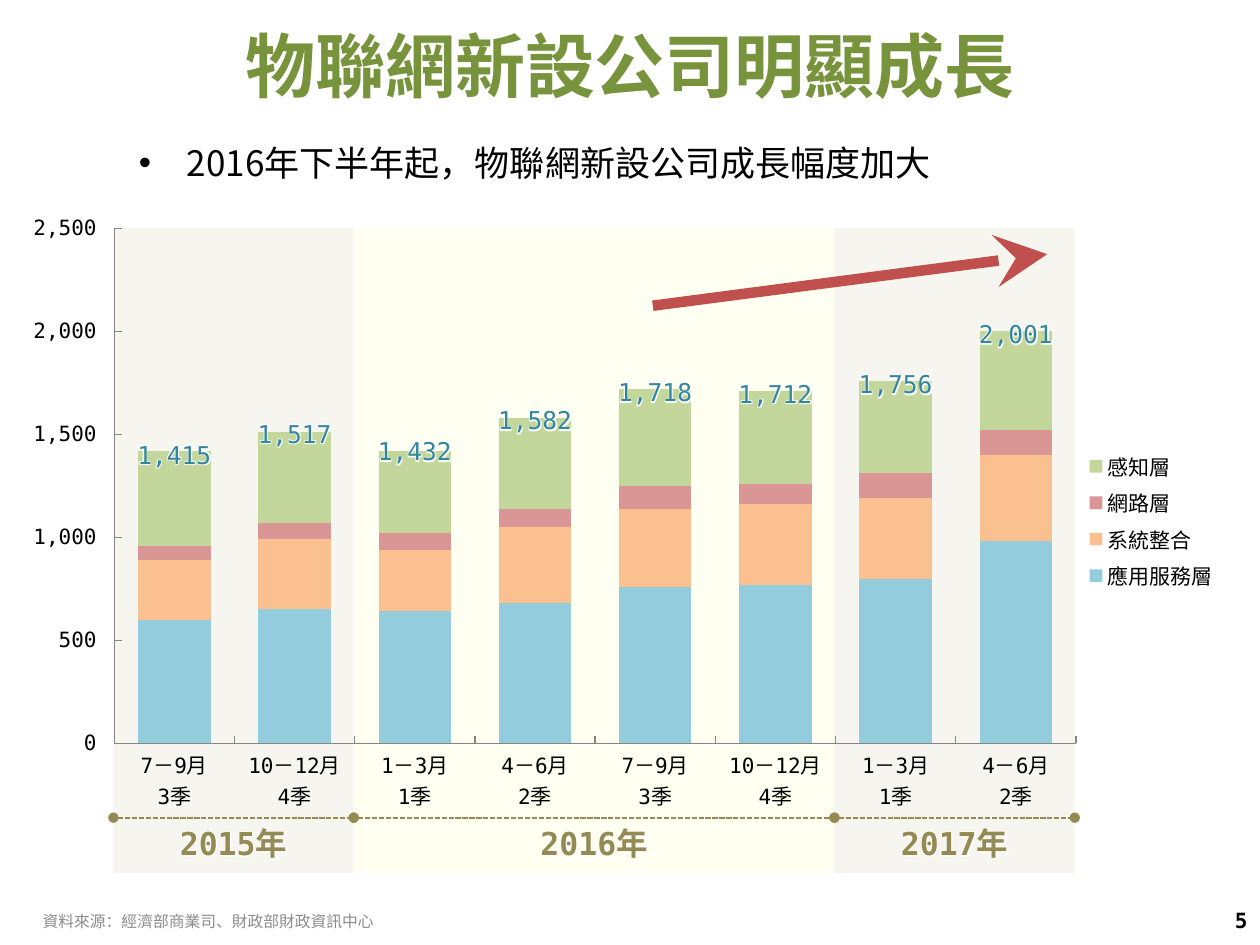
from dataclasses import dataclass

from lxml.etree import SubElement
from pptx import Presentation
from pptx.chart.data import CategoryChartData
from pptx.dml.color import RGBColor
from pptx.enum.chart import XL_CHART_TYPE as ChartType, XL_LEGEND_POSITION as LegendPosition, XL_TICK_MARK as TickMark
from pptx.enum.dml import MSO_LINE as LineStyle
from pptx.enum.shapes import MSO_CONNECTOR as Connector, MSO_SHAPE as Shape
from pptx.enum.text import MSO_ANCHOR as Anchor, PP_ALIGN as Align
from pptx.oxml import parse_xml
from pptx.oxml.ns import nsdecls, qn
from pptx.util import Inches, Pt

COLORS = {
    "title": "77933C", "text": "000000", "source": "8C8C8C", "year": "948A54",
    "total": "31859C", "arrow": "C0504D", "axis": "868686", "glow": "FFFFFF",
    "gray": "EEECE1", "yellow": "FFFFCC",
    "service": "93CDDD", "integration": "FAC090", "network": "D99694", "sensing": "C3D69B",
}
SANS, MONO = "Noto Sans CJK SC", "DejaVu Sans Mono"
QUARTERS = ["7－9月\n3季", "10－12月\n4季", "1－3月\n1季", "4－6月\n2季"]
SERIES = [
    ("應用服務層", "service", (600, 650, 640, 680, 760, 770, 800, 980)),
    ("系統整合", "integration", (290, 340, 300, 370, 380, 390, 390, 420)),
    ("網路層", "network", (70, 80, 80, 90, 110, 100, 120, 120)),
    ("感知層", "sensing", (460, 440, 400, 440, 470, 450, 450, 480)),
]
TOTALS = (1415, 1517, 1432, 1582, 1718, 1712, 1756, 2001)
MAXIMUM = 2500
YEARS = [("2015年", 0, 0.25, "gray", 50), ("2016年", 0.25, 0.75, "yellow", 25),
         ("2017年", 0.75, 1, "gray", 50)]
PLOT_SHARES = {"x": 0.071, "y": 0.074, "w": 0.801, "h": 0.75}


@dataclass
class Box:
    """A rectangle in inches."""
    left: float
    top: float
    width: float
    height: float

    def portion(self, x, y, width, height):
        """Return the box at the given shares of this one."""
        return Box(self.left + x * self.width, self.top + y * self.height,
                   width * self.width, height * self.height)

    def lengths(self):
        """Return left, top, width and height as lengths."""
        return [Inches(value) for value in (self.left, self.top, self.width, self.height)]


def color(name):
    """Look up a colour by name."""
    return RGBColor.from_string(COLORS[name])


def write(paragraph, text, size, font, color_name, bold=False, glow=False):
    """Add one formatted run."""
    run = paragraph.add_run()
    run.text = text
    run.font.size, run.font.name, run.font.bold = Pt(size), font, bold
    run.font.color.rgb = color(color_name)
    properties = run._r.get_or_add_rPr()
    properties.find(qn("a:latin")).addnext(parse_xml(f'<a:ea {nsdecls("a")} typeface="{SANS}"/>'))
    if glow:
        properties.find(qn("a:solidFill")).addnext(parse_xml(
            f'<a:effectLst {nsdecls("a")}><a:glow rad="38100"><a:srgbClr val="{COLORS["glow"]}"/>'
            '</a:glow></a:effectLst>'))


def add_text(slide, box, text, size, font, color_name, align=Align.LEFT, anchor=Anchor.TOP, **style):
    """Add a one-line text box and return it."""
    shape = slide.shapes.add_textbox(*box.lengths())
    frame = shape.text_frame
    frame.word_wrap, frame.vertical_anchor = True, anchor
    frame.paragraphs[0].alignment = align
    write(frame.paragraphs[0], text, size, font, color_name, **style)
    return shape


def add_line(slide, start, end, color_name, width, **ends):
    """Add a line with the given end shapes."""
    line = slide.shapes.add_connector(Connector.STRAIGHT, *map(Inches, (*start, *end)))
    line.line.color.rgb, line.line.width = color(color_name), Pt(width)
    SubElement(line._element.spPr, qn("a:effectLst"))
    for tag, (kind, size) in ends.items():
        SubElement(line._element.spPr.find(qn("a:ln")), qn(f"a:{tag}"), type=kind, w=size, len=size)
    return line


def add_heading(slide, title_box, bullet_box):
    """Place the title and the bullet line."""
    title = slide.shapes.title
    title.left, title.top, title.width, title.height = title_box.lengths()
    title.text_frame.vertical_anchor = Anchor.MIDDLE
    paragraph = title.text_frame.paragraphs[0]
    paragraph.alignment, paragraph.line_spacing = Align.CENTER, 0.9
    write(paragraph, "物聯網新設公司明顯成長", 40, SANS, "title", bold=True)
    bullet = add_text(slide, bullet_box, "2016年下半年起，物聯網新設公司成長幅度加大",
                      20, SANS, "text", Align.CENTER)
    properties = bullet.text_frame.paragraphs[0]._p.get_or_add_pPr()
    properties.set("marL", str(Inches(0.38)))
    properties.set("indent", str(-Inches(0.38)))
    SubElement(properties, qn("a:buFont"), typeface="Arial")
    SubElement(properties, qn("a:buChar"), char="•")


def add_footer(slide, source_box, number_box):
    """Place the source line and the page number."""
    add_text(slide, source_box, "資料來源：經濟部商業司、財政部財政資訊中心",
             9, SANS, "source", anchor=Anchor.MIDDLE)
    add_text(slide, number_box, "5", 12, MONO, "text", Align.RIGHT, Anchor.MIDDLE, bold=True)


def add_bands(slide, box):
    """Shade the background of each year."""
    for _, start, end, fill, opacity in YEARS:
        band = slide.shapes.add_shape(Shape.RECTANGLE, *box.portion(start, 0, end - start, 1).lengths())
        band.shadow.inherit = False
        band.line.fill.background()
        band.fill.solid()
        band.fill.fore_color.rgb = color(fill)
        tint = band._element.spPr.find(qn("a:solidFill"))[0]
        SubElement(tint, qn("a:alpha"), val=str(opacity * 1000))


def add_years(slide, box):
    """Mark the span and name of each year below the axis."""
    baseline = box.top + 0.914 * box.height
    for name, start, end, _, _ in YEARS:
        span = box.portion(start, 0, end - start, 1)
        label = Box(span.left + span.width / 2 - 0.58, baseline, 1.16, 0.4)
        add_text(slide, label, name, 18, MONO, "year", Align.CENTER, bold=True, glow=True)
        line = add_line(slide, (span.left, baseline), (span.left + span.width, baseline), "year", 1,
                        headEnd=("oval", "med"), tailEnd=("oval", "med"))
        line.line.dash_style = LineStyle.SQUARE_DOT


def add_company_chart(slide, box):
    """Add the stacked columns of new companies."""
    data = CategoryChartData()
    data.categories = QUARTERS * 2
    for name, _, values in SERIES:
        data.add_series(name, values)
    chart = slide.shapes.add_chart(ChartType.COLUMN_STACKED, *box.lengths(), data).chart
    chart.has_title = False
    chart.font.size, chart.font.name, chart.font.color.rgb = Pt(18), "Calibri", color("text")
    plot = chart.plots[0]
    plot.gap_width, plot.overlap, plot.vary_by_categories = 66, 100, False
    for series, (_, fill, _) in zip(plot.series, SERIES):
        series.format.fill.solid()
        series.format.fill.fore_color.rgb = color(fill)
    for axis in (chart.category_axis, chart.value_axis):
        axis.has_major_gridlines = False
        axis.major_tick_mark = TickMark.INSIDE
        axis.format.line.color.rgb = color("axis")
        axis.tick_labels.font.size, axis.tick_labels.font.name = Pt(12), MONO
    values = chart.value_axis
    values.minimum_scale, values.maximum_scale, values.major_unit = 0, MAXIMUM, 500
    values.tick_labels.number_format = r"#,##0_);[Red]\(#,##0\)"
    values.tick_labels.number_format_is_linked = False
    chart.has_legend = True
    chart.legend.position, chart.legend.include_in_layout = LegendPosition.RIGHT, False
    chart.legend.font.size, chart.legend.font.name = Pt(12), SANS
    area = chart._chartSpace.chart.plotArea
    for layout in area.findall(qn("c:layout")):
        area.remove(layout)
    modes = '<c:layoutTarget val="inner"/><c:xMode val="edge"/><c:yMode val="edge"/>'
    shares = "".join(f'<c:{key} val="{share}"/>' for key, share in PLOT_SHARES.items())
    area.insert(0, parse_xml(f'<c:layout {nsdecls("c")}><c:manualLayout>{modes}{shares}'
                             '</c:manualLayout></c:layout>'))
    clear = f'<c:spPr {nsdecls("c", "a")}><a:noFill/><a:ln><a:noFill/></a:ln></c:spPr>'
    area.append(parse_xml(clear))
    chart._chartSpace.find(qn("c:txPr")).addprevious(parse_xml(clear))


def add_totals(slide, plot):
    """Write each total over the top of its column and draw the trend arrow."""
    step = plot.width / len(TOTALS)
    for index, total in enumerate(TOTALS):
        center = plot.left + (index + 0.5) * step
        top = plot.top + plot.height * (1 - total / MAXIMUM)
        label = add_text(slide, Box(center - 0.4, top - 0.36, 0.8, 0.52), f"{total:,}",
                         14, MONO, "total", Align.CENTER, glow=True)
        frame = label.text_frame
        frame.margin_left = frame.margin_right = frame.margin_bottom = 0
        frame.margin_top = Inches(0.29)
    start, end = plot.portion(0.56, 0.15, 0, 0), plot.portion(0.97, 0.05, 0, 0)
    add_line(slide, (start.left, start.top), (end.left, end.top), "arrow", 6,
             tailEnd=("stealth", "lg"))


def main():
    """Build the slide and save it."""
    presentation = Presentation()
    presentation.slide_width, presentation.slide_height = Inches(10), Inches(7.5)
    slide = presentation.slides.add_slide(presentation.slide_layouts[5])
    chart_box, bands_box = Box(0.23, 1.41, 9.53, 5.45), Box(0.9, 1.81, 7.63, 5.12)
    add_heading(slide, Box(0.5, 0.2, 9, 0.71), Box(0.8, 1.07, 6.89, 0.44))
    add_footer(slide, Box(0.24, 7.21, 3.78, 0.2), Box(9.06, 7.1, 0.94, 0.4))
    add_bands(slide, bands_box)
    add_company_chart(slide, chart_box)
    add_years(slide, bands_box)
    add_totals(slide, chart_box.portion(*PLOT_SHARES.values()))
    presentation.save("out.pptx")


if __name__ == "__main__":
    main()
